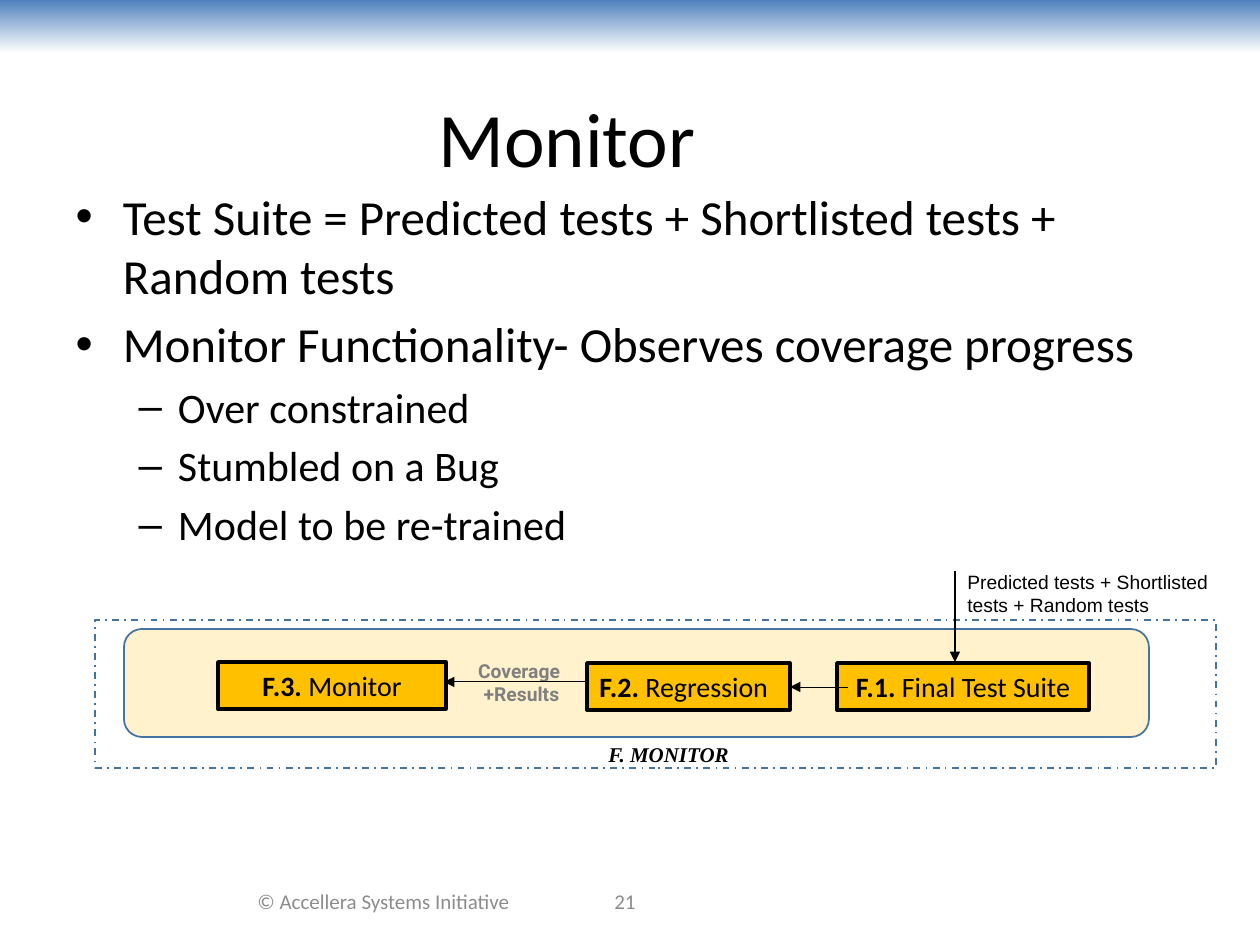
from lxml import etree
from pptx import Presentation
from pptx import util as u
from pptx.dml.color import RGBColor
from pptx.enum import dml, shapes, text
from pptx.oxml.ns import qn

PX = u.Inches(1) // 126  # one px in EMU

BLACK = RGBColor(0x00, 0x00, 0x00)
WHITE = RGBColor(0xFF, 0xFF, 0xFF)
GREY = RGBColor(0x80, 0x80, 0x80)
FOOTER_GREY = RGBColor(0x8C, 0x8C, 0x8C)
BLUE = RGBColor(0x4F, 0x81, 0xBD)
OUTLINE = RGBColor(0x43, 0x73, 0x9E)
CREAM = RGBColor(0xFF, 0xF2, 0xCC)
AMBER = RGBColor(0xFF, 0xC0, 0x00)

LEFT, CENTER = text.PP_ALIGN.LEFT, text.PP_ALIGN.CENTER
TOP, MIDDLE = text.MSO_ANCHOR.TOP, text.MSO_ANCHOR.MIDDLE

# Content: boxes are (left, top, width, height) in px
TITLE = "Monitor"
BULLETS = [  # level, text
    (0, "Test Suite = Predicted tests + Shortlisted tests + Random tests"),
    (0, "Monitor Functionality- Observes coverage progress"),
    (1, "Over constrained"),
    (1, "Stumbled on a Bug"),
    (1, "Model to be re-trained"),
]
BULLET_SIZES = (28, 24)
STEPS = [  # box, number, name, alignment
    ((837, 663, 252, 47), "F.1. ", "Final Test Suite", CENTER),
    ((587, 663, 203, 47), "F.2. ", "Regression", LEFT),
    ((218, 662, 228, 47), "F.3. ", "Monitor", CENTER),
]
LABELS = [  # box, lines, font, size, colour, bold, italic, alignment, anchor
    ((231, 876, 305, 50), ["© Accellera Systems Initiative"],
     "Calibri", 12, FOOTER_GREY, False, False, CENTER, MIDDLE),
    ((504, 876, 242, 50), ["21"],
     "Calibri", 12, FOOTER_GREY, False, False, CENTER, MIDDLE),
    ((391, 653, 261, 59), ["Coverage ", "+Results"],
     "Roboto", 11, GREY, True, False, CENTER, TOP),
    ((596, 735, 241, 38), ["F. MONITOR"],
     "Times New Roman", 12, BLACK, True, True, LEFT, TOP),
    ((955, 564, 292, 59), ["Predicted tests + Shortlisted tests + Random tests"],
     "Arial", 11, BLACK, False, False, LEFT, TOP),
]
ARROWS = [  # from x, from y, to x, to y, line width
    (587, 682, 444, 682, 0.5),
    (848, 687, 790, 687, 0.5),
    (955, 571, 955, 662, 0.75),
]


def emu(lengths):
    return [length * PX for length in lengths]


def add_run(paragraph, words, font, size, colour, bold=False, italic=False):
    run = paragraph.add_run()
    run.text = words
    run.font.name = font
    run.font.size = u.Pt(size)
    run.font.color.rgb = colour
    run.font.bold = bold
    run.font.italic = italic


def add_box(kind, box, fill=None, line=None, width=1):
    shape = slide.shapes.add_shape(kind, *emu(box))
    shape.shadow.inherit = False
    if fill is None:
        shape.fill.background()
    else:
        shape.fill.solid()
        shape.fill.fore_color.rgb = fill
    if line is None:
        shape.line.fill.background()
    else:
        shape.line.color.rgb = line
        shape.line.width = u.Pt(width)
    return shape


def add_label(box, lines, font, size, colour, bold, italic, align, anchor):
    frame = slide.shapes.add_textbox(*emu(box)).text_frame
    frame.word_wrap = True
    frame.vertical_anchor = anchor
    for i, words in enumerate(lines):
        paragraph = frame.add_paragraph() if i else frame.paragraphs[0]
        paragraph.alignment = align
        add_run(paragraph, words, font, size, colour, bold, italic)


def add_arrow(x1, y1, x2, y2, width):
    arrow = slide.shapes.add_connector(
        shapes.MSO_CONNECTOR.STRAIGHT, *emu((x1, y1, x2, y2)))
    arrow.line.color.rgb = BLACK
    arrow.line.width = u.Pt(width)
    properties = arrow.line._get_or_add_ln()
    etree.SubElement(properties, qn("a:tailEnd"), type="triangle")
    etree.SubElement(arrow._element.spPr, qn("a:effectLst"))


def place(shape, box):
    shape.left, shape.top, shape.width, shape.height = emu(box)


presentation = Presentation()
presentation.slide_width, presentation.slide_height = emu((1260, 945))
slide = presentation.slides.add_slide(presentation.slide_layouts[1])
title, body = slide.placeholders

# Gradient band across the top
band = add_box(shapes.MSO_SHAPE.RECTANGLE, (0, 0, 1260, 53), WHITE)
band.fill.gradient()
band.fill.gradient_angle = 270
for stop, colour, position in zip(band.fill.gradient_stops, (BLUE, WHITE), (0, 1)):
    stop.color.rgb = colour
    stop.position = position

# Title
place(title, (0, 58, 1134, 157))
title.text_frame.vertical_anchor = MIDDLE
title_line = title.text_frame.paragraphs[0]
title_line.alignment = CENTER
add_run(title_line, TITLE, "Calibri", 44, BLACK)

# Bullet list
place(body, (63, 180, 1134, 391))
for i, (level, words) in enumerate(BULLETS):
    paragraph = body.text_frame.add_paragraph() if i else body.text_frame.paragraphs[0]
    paragraph.level = level
    if i == 0:
        paragraph.space_before = u.Pt(0)
    add_run(paragraph, words, "Calibri", BULLET_SIZES[level], BLACK)

# Dashed frame and rounded panel
frame_box = add_box(shapes.MSO_SHAPE.RECTANGLE, (95, 620, 1121, 148), None, OUTLINE)
frame_box.line.dash_style = dml.MSO_LINE.DASH_DOT
add_box(shapes.MSO_SHAPE.ROUNDED_RECTANGLE, (124, 629, 1025, 108), CREAM, OUTLINE)

# Flow steps
for box, number, name, align in STEPS:
    step = add_box(shapes.MSO_SHAPE.RECTANGLE, box, AMBER, BLACK, 2)
    step.text_frame.vertical_anchor = TOP
    paragraph = step.text_frame.paragraphs[0]
    paragraph.alignment = align
    add_run(paragraph, number, "Calibri", 16, BLACK, bold=True)
    add_run(paragraph, name, "Calibri", 16, BLACK)

# Labels, footer and arrows
for label in LABELS:
    add_label(*label)
for arrow in ARROWS:
    add_arrow(*arrow)

presentation.save("out.pptx")
